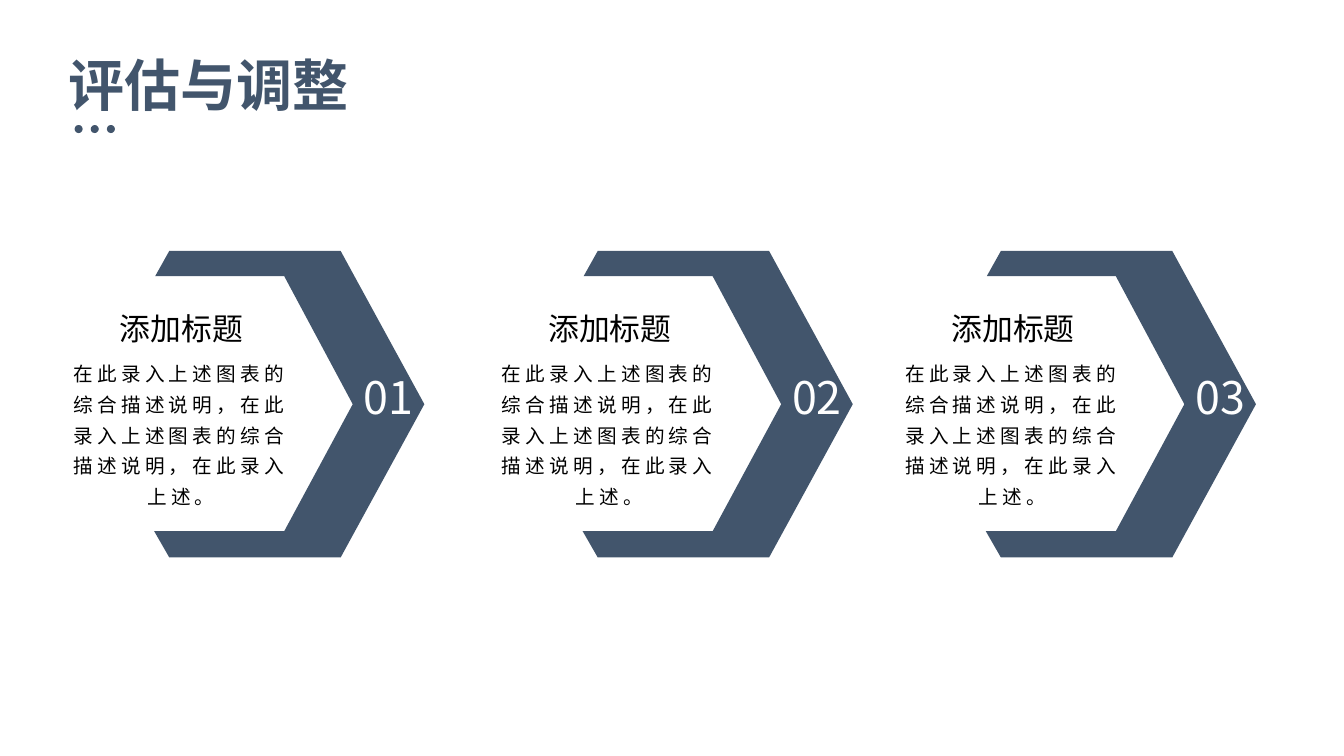
from lxml import etree
from pptx import Presentation
from pptx.dml.color import RGBColor
from pptx.enum.shapes import MSO_SHAPE
from pptx.enum.text import MSO_ANCHOR, PP_ALIGN
from pptx.oxml.ns import qn
from pptx.util import Inches, Pt

OVAL = MSO_SHAPE.OVAL
TOP, MIDDLE = MSO_ANCHOR.TOP, MSO_ANCHOR.MIDDLE
LEFT, CENTER = PP_ALIGN.LEFT, PP_ALIGN.CENTER

SLATE = RGBColor(0x42, 0x55, 0x6C)
BLACK = RGBColor(0, 0, 0)
PALE = RGBColor(0xFE, 0xFE, 0xFE)
FONT = "Noto Sans CJK SC"

COLS, ROWS = 160, 90
STARTS = (7.56, 58.56, 106.56)
CHEVRON = (
    (12.6, 29.88), (33, 29.88), (42.96, 48.12), (33, 66.36), (12.6, 66.36),
    (10.8, 63.24), (26.28, 63.24), (34.44, 48.12), (26.28, 32.88), (10.92, 32.88),
)
BODY = "在此录入上述图表的综合描述说明，在此录入上述图表的综合描述说明，在此录入上述。"


class Board:
    """Draws on one slide, with lengths in columns and rows."""

    def __init__(self, deck):
        self.slide = deck.slides.add_slide(deck.slide_layouts[6])
        self.shapes = self.slide.shapes
        self.col = deck.slide_width / COLS
        self.row = deck.slide_height / ROWS

    def place(self, x, y):
        return round(x * self.col), round(y * self.row)

    def paint(self, shape):
        shape.shadow.inherit = False
        shape.fill.solid()
        shape.fill.fore_color.rgb = SLATE
        shape.line.fill.background()

    def dot(self, x, y, size):
        self.paint(self.shapes.add_shape(
            OVAL, *self.place(x, y), *self.place(size, size)))

    def outline(self, points):
        first, *rest = [self.place(x, y) for x, y in points]
        pen = self.shapes.build_freeform(*first)
        pen.add_line_segments(rest, close=True)
        self.paint(pen.convert_to_shape())

    def text(self, words, x, y, wide, high, size, color, align=CENTER,
             anchor=MIDDLE, bold=False, wrap=True, inset=True,
             pitch=None, track=None):
        """Add text; pitch is the line height and track the letter gap, in points."""
        box = self.shapes.add_textbox(*self.place(x, y), *self.place(wide, high))
        frame = box.text_frame
        frame.text = words
        frame.word_wrap = wrap
        frame.vertical_anchor = anchor
        if not inset:
            frame.margin_left = frame.margin_right = 0
            frame.margin_top = frame.margin_bottom = 0
        para = frame.paragraphs[0]
        para.alignment = align
        if pitch:
            para.line_spacing = Pt(pitch)
        for run in para.runs:
            font = run.font
            font.name, font.size, font.bold = FONT, Pt(size), bold
            font.color.rgb = color
            props = run._r.get_or_add_rPr()
            etree.SubElement(props, qn("a:ea")).set("typeface", FONT)
            if track:
                props.set("spc", str(track * 100))

    def panel(self, left, number):
        self.outline([(left + x, y) for x, y in CHEVRON])
        self.text(f"{number:02}", left + 34.32, 43.32, 8.76, 7.68, 32, PALE,
                  wrap=False)
        self.text("添加标题", left + 4.2, 36.24, 19.68, 5.64, 22, BLACK)
        self.text(BODY, left, 41.64, 27.96, 19.56, 14, BLACK,
                  anchor=TOP, pitch=22, track=3)


def main():
    deck = Presentation()
    deck.slide_width, deck.slide_height = Inches(13.33), Inches(7.5)
    board = Board(deck)
    board.text("评估与调整", 8.16, 6, 139.8, 8.04, 40, SLATE,
               align=LEFT, bold=True, inset=False)
    for step in range(3):
        board.dot(8.88 + 1.92 * step, 14.88, 0.96)
    for number, left in enumerate(STARTS, 1):
        board.panel(left, number)
    deck.save("out.pptx")


if __name__ == "__main__":
    main()
